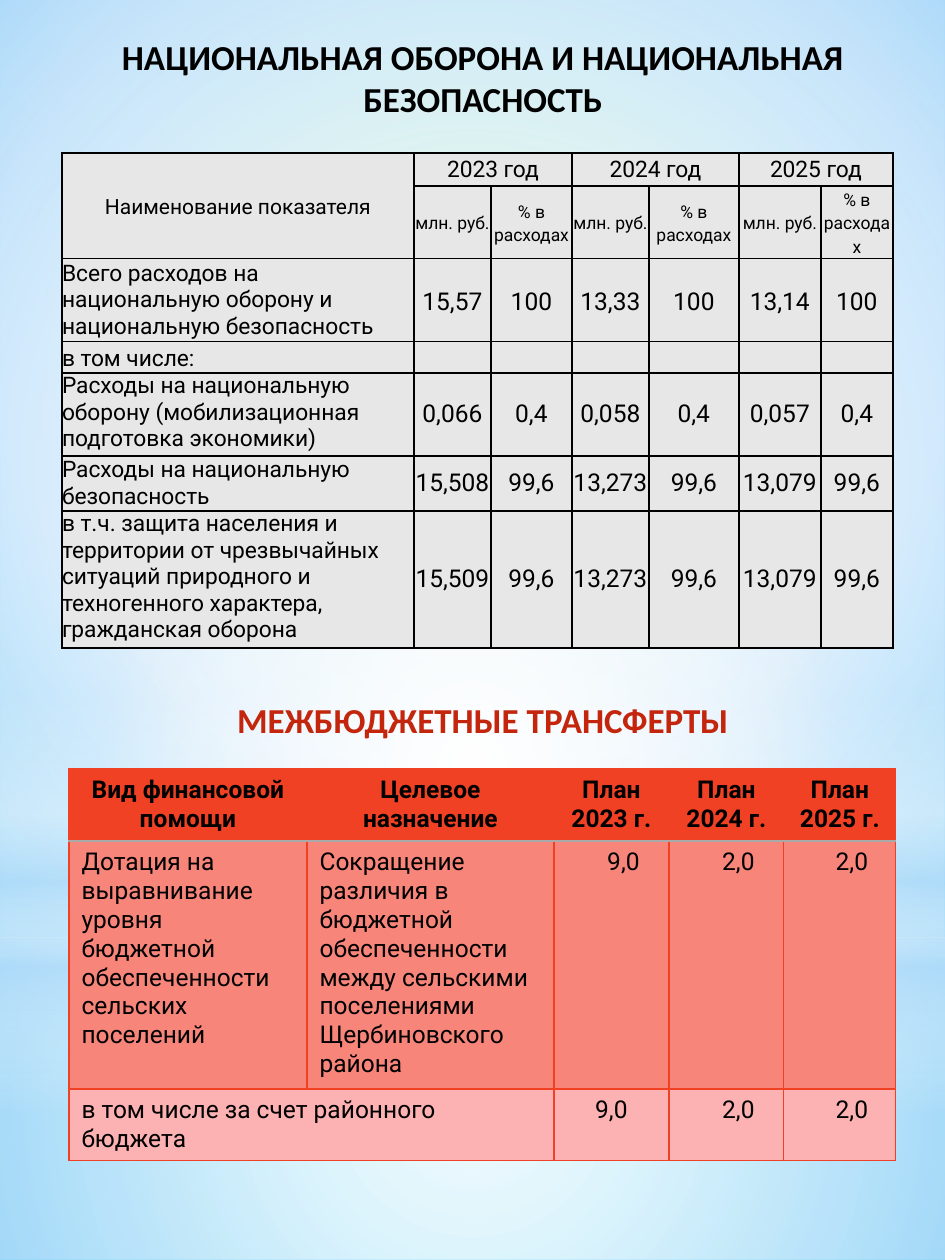
from lxml.etree import SubElement
from pptx import Presentation
from pptx.dml.color import RGBColor
from pptx.enum.shapes import MSO_SHAPE as SHAPE
from pptx.enum.text import MSO_ANCHOR as ANCHOR, MSO_AUTO_SIZE as AUTO, PP_ALIGN as ALIGN
from pptx.oxml.ns import qn
from pptx.util import Emu, Pt

SCALE = 914400 / 126
W, H = 945, 1260
BLACK, GREY, RED, RULE = "000000", "E7E7E7", "F14124", "A9A9A9"
LIGHT_RED, PALE_RED = "F8857A", "FCB1B2"

# Backdrop: stops are (position %, colour, opacity %), focus is l, t, r, b %
BACKGROUND = [(0, "9EE2CF", 100), (60, "B4DCFA", 100), (100, "5ECCF3", 100)]
CENTER = (50, 50, 50, 50)
GLOWS = [
    (SHAPE.RECTANGLE, (0, 938, W, 322), CENTER,
     [(0, "FFFFFF", 91), (37, "FFFFFF", 76), (100, "B4DCFA", 79)]),
    (SHAPE.RECTANGLE, (0, 0, W, 938), CENTER,
     [(0, "FFFFFF", 89), (48, "FFFFFF", 62), (100, "B4DCFA", 79)]),
    (SHAPE.RECTANGLE, (0, 692, W, 420), None,
     [(0, "FFFFFF", 0), (29, "FFFFFF", 30), (45, "B4DCFA", 40),
      (55, "FFFFFF", 26), (65, "B4DCFA", 60), (100, "FFFFFF", 0)]),
    (SHAPE.OVAL, (0, 294, W, 938), CENTER,
     [(0, "FFFFFF", 100), (56, "FFFFFF", 0)]),
]

DEFENCE_TITLE = "НАЦИОНАЛЬНАЯ ОБОРОНА И НАЦИОНАЛЬНАЯ БЕЗОПАСНОСТЬ"
DEFENCE_COLS = [352, 77, 81, 77, 90, 82, 72]
DEFENCE_ROWS = [33, 72, 83, 31, 83, 55, 137]
DEFENCE = [
    ["Наименование показателя", "2023 год", "", "2024 год", "", "2025 год", ""],
    [""] + ["млн. руб.", "% в расходах"] * 3,
    ["Всего расходов на национальную оборону и национальную безопасность",
     "15,57", "100", "13,33", "100", "13,14", "100"],
    ["в том числе:"] + [""] * 6,
    ["Расходы на национальную оборону (мобилизационная подготовка экономики)",
     "0,066", "0,4", "0,058", "0,4", "0,057", "0,4"],
    ["Расходы на национальную безопасность",
     "15,508", "99,6", "13,273", "99,6", "13,079", "99,6"],
    ["в т.ч. защита населения и территории от чрезвычайных ситуаций природного "
     "и техногенного характера, гражданская оборона",
     "15,509", "99,6", "13,273", "99,6", "13,079", "99,6"],
]

TRANSFER_TITLE = "МЕЖБЮДЖЕТНЫЕ ТРАНСФЕРТЫ"
TRANSFER_COLS = [238, 247, 115, 115, 112]
TRANSFER_ROWS = [72, 248, 71]
TRANSFERS = [
    ["Вид финансовой помощи", "Целевое назначение", "План 2023 г.",
     "План\n2024 г.", "План\n2025 г."],
    ["Дотация на выравнивание уровня бюджетной обеспеченности сельских поселений",
     "Сокращение различия в бюджетной обеспеченности между сельскими "
     "поселениями Щербиновского района", "9,0", "2,0", "2,0"],
    ["в том числе за счет районного бюджета", "", "9,0", "2,0", "2,0"],
]


def px(n):
    return Emu(round(n * SCALE))


def rgb(color):
    return RGBColor.from_string(color)


def set_gradient(fill, parent, stops, focus=None):
    """Give parent a gradient; without a focus it runs straight down."""
    fill.solid()
    old = parent.find(qn("a:solidFill"))
    grad = parent.makeelement(qn("a:gradFill"), {"rotWithShape": "1"})
    stop_list = SubElement(grad, qn("a:gsLst"))
    for pos, color, opacity in stops:
        stop = SubElement(stop_list, qn("a:gs"), pos=str(pos * 1000))
        clr = SubElement(stop, qn("a:srgbClr"), val=color)
        if opacity < 100:
            SubElement(clr, qn("a:alpha"), val=str(opacity * 1000))
    if focus:
        circle = SubElement(grad, qn("a:path"), {"path": "circle"})
        sides = {side: str(v * 1000) for side, v in zip("ltrb", focus)}
        SubElement(circle, qn("a:fillToRect"), sides)
    else:
        SubElement(grad, qn("a:lin"), ang="5400000", scaled="0")
    parent.replace(old, grad)


def write(tf, text, size, font="Roboto", color=BLACK, bold=False,
          align=ALIGN.CENTER, spacing=1.0, indent=0):
    for i, line in enumerate(text.split("\n")):
        p = tf.add_paragraph() if i else tf.paragraphs[0]
        p.alignment, p.line_spacing = align, spacing
        if indent:
            p._p.get_or_add_pPr().set("marL", str(px(indent)))
        if not line:
            p._p.get_or_add_endParaRPr().set("sz", str(size * 100))
            continue
        r = p.add_run()
        r.text = line
        r.font.size, r.font.name, r.font.bold = Pt(size), font, bold
        r.font.color.rgb = rgb(color)


def format_heading(sp, box, text, color):
    sp.left, sp.top, sp.width, sp.height = map(px, box)
    tf = sp.text_frame
    tf.margin_left = tf.margin_right = tf.margin_top = tf.margin_bottom = 0
    tf.word_wrap, tf.auto_size = True, AUTO.SHAPE_TO_FIT_TEXT
    tf.vertical_anchor = ANCHOR.TOP
    write(tf, text, 20, "Calibri", color, bold=True, indent=1)


def set_borders(cell, color, width, **special):
    """Draw four sides; special maps a side to its own (colour, width)."""
    tc_pr = cell._tc.get_or_add_tcPr()
    for side in "LRTB":
        side_color, side_width = special.get(side, (color, width))
        ln = SubElement(tc_pr, qn(f"a:ln{side}"), w=str(Pt(side_width)))
        fill = SubElement(ln, qn("a:solidFill"))
        SubElement(fill, qn("a:srgbClr"), val=side_color)


def add_grid(s, left, top, cols, rows):
    frame = s.shapes.add_table(len(rows), len(cols), px(left), px(top),
                               px(sum(cols)), px(sum(rows)))
    table = frame.table
    table.first_row = table.horz_banding = False
    for col, width in zip(table.columns, cols):
        col.width = px(width)
    for row, height in zip(table.rows, rows):
        row.height = px(height)
    return table


def set_fill(cell, color):
    cell.fill.solid()
    cell.fill.fore_color.rgb = rgb(color)


def add_transfers(s):
    table = add_grid(s, 69, 769, TRANSFER_COLS, TRANSFER_ROWS)
    fills = [RED, LIGHT_RED, PALE_RED]
    rules = [{"B": (RULE, 1.25)}, {"T": (RULE, 1.25)}, {}]
    for i, row in enumerate(TRANSFERS):
        for j, text in enumerate(row):
            cell = table.cell(i, j)
            set_borders(cell, RED, 0.75, **rules[i])
            set_fill(cell, fills[i])
            cell.vertical_anchor = ANCHOR.MIDDLE if i == 0 else ANCHOR.TOP
            indented = i > 0 and j > 1 and (i, j) != (2, 2)
            write(cell.text_frame, text, 14, bold=i == 0,
                  align=ALIGN.LEFT if i and j < 2 else ALIGN.CENTER,
                  indent=24 if indented else 0)
    table.cell(2, 0).merge(table.cell(2, 1))


def add_defence(s):
    table = add_grid(s, 62, 153, DEFENCE_COLS, DEFENCE_ROWS)
    for i, row in enumerate(DEFENCE):
        for j, text in enumerate(row):
            cell = table.cell(i, j)
            set_borders(cell, BLACK, 1)
            set_fill(cell, GREY)
            cell.margin_left = cell.margin_right = 0
            cell.margin_top = cell.margin_bottom = 0
            label = i > 1 and j == 0
            top = (i == 0 and j > 0) or (label and i in (3, 4, 6))
            cell.vertical_anchor = ANCHOR.TOP if top else ANCHOR.MIDDLE
            if i < 2:
                size = 12 if i == j == 0 else (13, 10)[i]
            else:
                size = 13 if label or not text else 14
            loose = i < 4 and (i, j) != (2, 0)
            write(cell.text_frame, text, size, spacing=1.15 if loose else 1.0,
                  align=ALIGN.LEFT if label else ALIGN.CENTER)
    table.cell(0, 0).merge(table.cell(1, 0))
    for j in (1, 3, 5):
        table.cell(0, j).merge(table.cell(0, j + 1))


def main():
    prs = Presentation()
    prs.slide_width, prs.slide_height = px(W), px(H)
    s = prs.slides.add_slide(prs.slide_layouts[5])

    # Background and glows
    bg_fill = s.background.fill
    bg_fill.solid()
    set_gradient(bg_fill, s.element.find(".//" + qn("p:bgPr")),
                 BACKGROUND, (20, 10, 20, 60))
    for kind, box, focus, stops in GLOWS:
        sp = s.shapes.add_shape(kind, *map(px, box))
        sp.shadow.inherit = False
        sp.line.fill.background()
        set_gradient(sp.fill, sp.element.spPr, stops, focus)

    # Headings, with the title brought in front of the glows
    title = s.shapes.title
    s.shapes.element.append(title.element)
    format_heading(title, (66, 35, 833, 84), DEFENCE_TITLE, BLACK)
    heading = s.shapes.add_textbox(0, 0, 0, 0)
    format_heading(heading, (66, 698, 833, 43), TRANSFER_TITLE, "C3260C")

    # Tables
    add_transfers(s)
    add_defence(s)
    prs.save("out.pptx")


if __name__ == "__main__":
    main()
